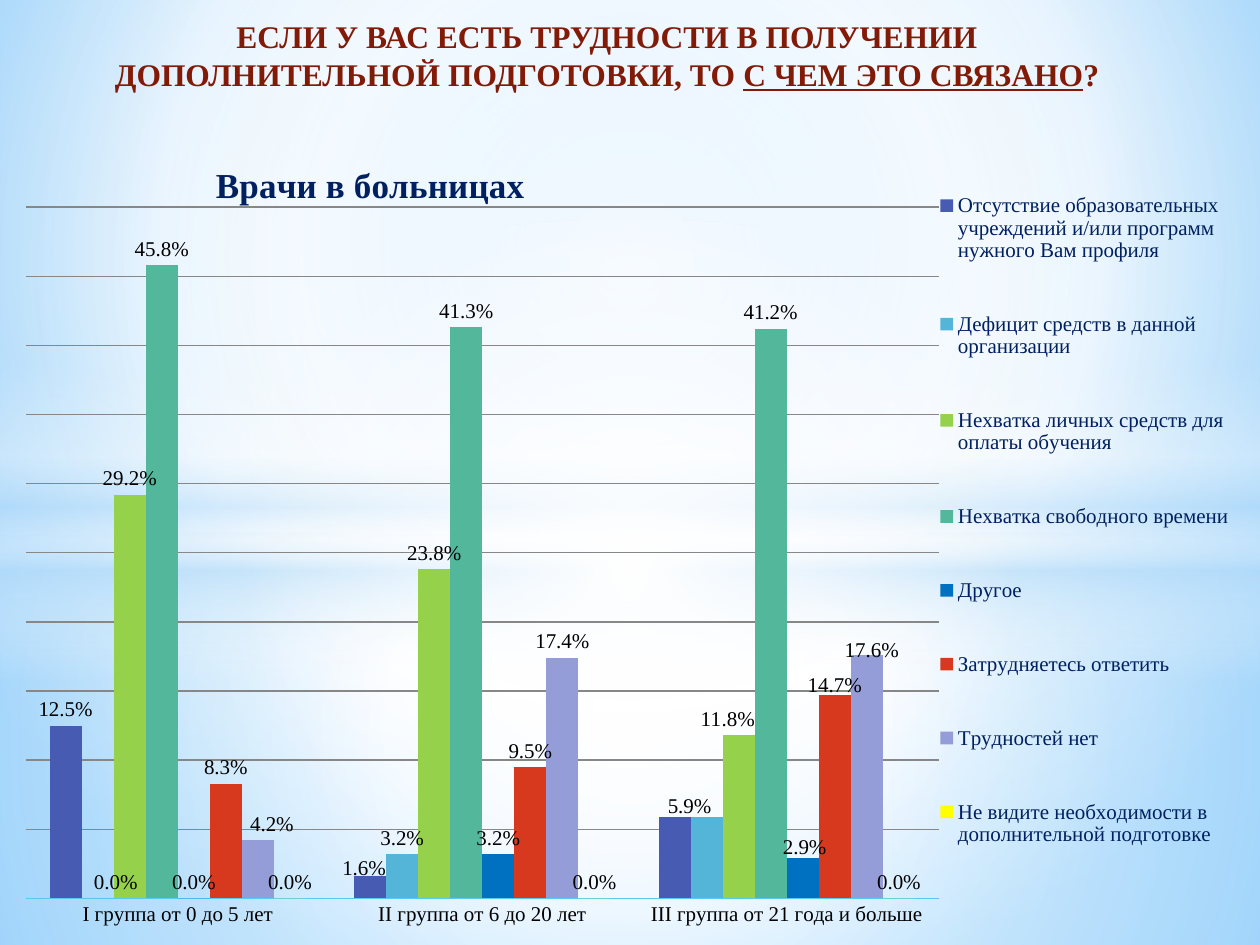
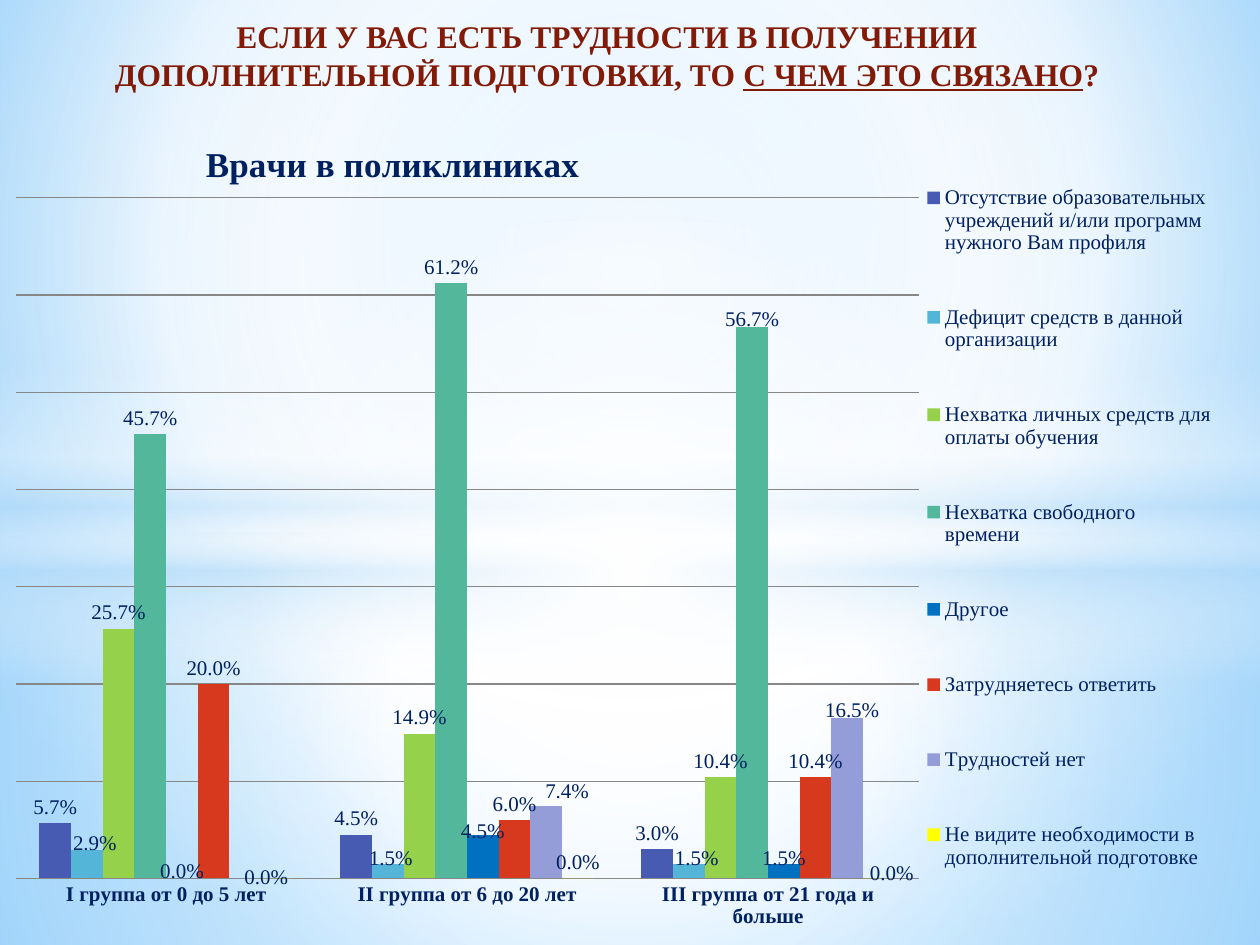
"""Build two survey slides with clustered column charts on a shared gradient background."""
from lxml import etree
from pptx import Presentation
from pptx import util as u
from pptx.chart.data import CategoryChartData
from pptx.dml.color import RGBColor
from pptx.enum import chart as c, shapes, text
from pptx.oxml import parse_xml
from pptx.oxml.ns import nsdecls, qn

PX = 914400 / 126
FONT = "Times New Roman"
MAROON = RGBColor(0x82, 0x1A, 0x08)
NAVY = RGBColor(0x00, 0x20, 0x60)
BLACK = RGBColor(0x00, 0x00, 0x00)
GRAY = RGBColor(0x87, 0x87, 0x87)
SKY = RGBColor(0x58, 0xC9, 0xF1)
INDIGO = RGBColor(0x46, 0x5B, 0xB1)
CYAN = RGBColor(0x54, 0xB5, 0xD9)
LIME = RGBColor(0x95, 0xD1, 0x4B)
TEAL = RGBColor(0x53, 0xB7, 0x9C)
BLUE = RGBColor(0x00, 0x70, 0xC0)
RED = RGBColor(0xD7, 0x39, 0x1F)
LAVENDER = RGBColor(0x94, 0x9D, 0xD7)
YELLOW = RGBColor(0xFF, 0xFF, 0x00)


def paint_gradient(fill, element, stops, focus=None):
    fill.gradient()
    stop_xml = "".join(
        f'<a:gs pos="{position * 1000}"><a:srgbClr val="{color}">'
        f'<a:alpha val="{opacity * 1000}"/></a:srgbClr></a:gs>'
        for position, color, opacity in stops)
    if focus:
        edges = " ".join(f'{side}="{value * 1000}"' for side, value in zip("ltrb", focus))
        direction = f'<a:path path="circle"><a:fillToRect {edges}/></a:path>'
    else:
        direction = '<a:lin ang="5400000" scaled="0"/>'
    old = element.find(".//" + qn("a:gradFill"))
    old.getparent().replace(old, parse_xml(
        f'<a:gradFill {nsdecls("a")} rotWithShape="1"><a:gsLst>{stop_xml}</a:gsLst>{direction}</a:gradFill>'))


def set_layout(parent, index, mode="edge", target=None, **values):
    for old in parent.findall(qn("c:layout")):
        parent.remove(old)
    target_xml = f'<c:layoutTarget val="{target}"/>' if target else ""
    mode_xml = f'<c:xMode val="{mode}"/><c:yMode val="{mode}"/>'
    value_xml = "".join(f'<c:{key} val="{value:.4f}"/>' for key, value in values.items())
    parent.insert(index, parse_xml(
        f'<c:layout {nsdecls("c")}><c:manualLayout>{target_xml}{mode_xml}{value_xml}'
        '</c:manualLayout></c:layout>'))


CENTER = (50, 50, 50, 50)
RECTANGLE = shapes.MSO_SHAPE.RECTANGLE
BANDS = [
    (RECTANGLE, (0, 533, 1260, 412), CENTER,
     [(0, "FFFFFF", 91), (37, "FFFFFF", 76), (100, "B4DCFA", 79)]),
    (RECTANGLE, (0, 0, 1260, 533), CENTER,
     [(0, "FFFFFF", 89), (48, "FFFFFF", 62), (100, "B4DCFA", 79)]),
    (RECTANGLE, (0, 365, 1260, 315), None,
     [(0, "FFFFFF", 0), (29, "FFFFFF", 30), (45, "B4DCFA", 40),
      (55, "FFFFFF", 26), (65, "B4DCFA", 60), (100, "FFFFFF", 0)]),
    (shapes.MSO_SHAPE.OVAL, (0, 220, 1260, 703), CENTER,
     [(0, "FFFFFF", 100), (54, "FFFFFF", 0)]),
]
TITLE_RUNS = [
    ("ЕСЛИ У ВАС ЕСТЬ ТРУДНОСТИ В ПОЛУЧЕНИИ ДОПОЛНИТЕЛЬНОЙ ПОДГОТОВКИ, ТО ", False),
    ("С ЧЕМ ЭТО СВЯЗАНО", True),
    ("?", False),
]
GROUPS = ["I группа от 0 до 5 лет", "II группа от 6 до 20 лет", "III группа от 21 года и больше"]
REASONS = [
    ("Отсутствие образовательных учреждений и/или программ нужного Вам профиля", INDIGO),
    ("Дефицит средств в данной организации", CYAN),
    ("Нехватка личных средств для оплаты обучения", LIME),
    ("Нехватка свободного времени", TEAL),
    ("Другое", BLUE),
    ("Затрудняетесь ответить", RED),
    ("Трудностей нет", LAVENDER),
    ("Не видите необходимости в дополнительной подготовке", YELLOW),
]
SURVEYS = [
    dict(
        name="Врачи в больницах", frame=(25, 116, 1235, 829), title_at=(209, 156),
        legend=(936, 143, 297, 754), plot_width=0.74, maximum=0.5, step=0.05,
        color=BLACK, axis_color=SKY, bold=False,
        values=[(0.125, 0.016, 0.059), (0, 0.032, 0.059), (0.292, 0.238, 0.118),
                (0.458, 0.413, 0.412), (0, 0.032, 0.029), (0.083, 0.095, 0.147),
                (0.042, 0.174, 0.176), (0, 0, 0)],
        label_shifts={(0, 1): (-6, 8), (0, 2): None, (1, 0): (18, 0), (1, 2): (-17, 6),
                      (2, 2): (-11, 0), (4, 2): (2, 5), (5, 2): (0, 6),
                      (6, 0): (14, 0), (6, 2): (5, 11)}),
    dict(
        name="Врачи в поликлиниках", frame=(15, 108, 1211, 820), title_at=(199, 136),
        legend=(926, 134, 286, 791), plot_width=0.746, maximum=0.7, step=0.1,
        color=NAVY, axis_color=GRAY, bold=True,
        values=[(0.057, 0.045, 0.03), (0.029, 0.015, 0.015), (0.257, 0.149, 0.104),
                (0.457, 0.612, 0.567), (0, 0.045, 0.015), (0.2, 0.06, 0.104),
                (0, 0.074, 0.165), (0, 0, 0)],
        label_shifts={(1, 0): (8, 9), (1, 1): (3, 11), (1, 2): (8, 11), (3, 2): (0, 8),
                      (4, 0): (0, 9), (4, 1): (0, 13), (4, 2): (0, 11), (6, 0): (21, 15),
                      (6, 1): (21, 1), (6, 2): (5, 8), (7, 0): None, (7, 2): (13, 11)}),
]

presentation = Presentation()
presentation.slide_width, presentation.slide_height = round(1260 * PX), round(945 * PX)
title_only = presentation.slide_layouts[5]
master = presentation.slide_master
slides = [presentation.slides.add_slide(title_only) for survey in SURVEYS]

paint_gradient(master.background.fill, master.element,
               [(0, "9ED5FF", 100), (60, "FFFFFF", 100), (100, "5BB9FF", 100)], (20, 10, 20, 60))
for number, (kind, box, focus, stops) in enumerate(BANDS):
    band = slides[0].shapes.add_shape(kind, *[round(length * PX) for length in box])
    band.shadow.inherit = False
    band.line.fill.background()
    paint_gradient(band.fill, band.element, stops, focus)
    band.element.nvSpPr.cNvPr.set("id", str(20 + number))
    master.element.cSld.spTree.insert(2 + number, band.element)

for slide, survey in zip(slides, SURVEYS):
    title = slide.shapes.title
    title.left, title.top, title.width, title.height = [round(length * PX) for length in (74, 11, 1066, 90)]
    title.text_frame.word_wrap = True
    title.text_frame.auto_size = text.MSO_AUTO_SIZE.SHAPE_TO_FIT_TEXT
    title.text_frame.vertical_anchor = text.MSO_ANCHOR.TOP
    paragraph = title.text_frame.paragraphs[0]
    paragraph.alignment = text.PP_ALIGN.CENTER
    for wording, underlined in TITLE_RUNS:
        run = paragraph.add_run()
        run.text = wording
        run.font.name, run.font.size, run.font.bold = FONT, u.Pt(18), True
        run.font.underline = underlined
        run.font.color.rgb = MAROON

    data = CategoryChartData(number_format="0.0%")
    data.categories = GROUPS
    for (reason, color), values in zip(REASONS, survey["values"]):
        data.add_series(reason, values)
    left, top, width, height = survey["frame"]
    chart = slide.shapes.add_chart(
        c.XL_CHART_TYPE.COLUMN_CLUSTERED, *[round(length * PX) for length in survey["frame"]], data).chart
    chart.font.name, chart.font.size = FONT, u.Pt(12)
    chart.font.color.rgb = survey["color"]

    chart.has_title = True
    chart.chart_title.text_frame.text = survey["name"]
    heading = chart.chart_title.text_frame.paragraphs[0].runs[0].font
    heading.name, heading.size, heading.bold = FONT, u.Pt(20), True
    heading.color.rgb = NAVY
    title_x, title_y = survey["title_at"]
    set_layout(chart.chart_title._element, 1, x=(title_x - left) / width, y=(title_y - top) / height)

    chart.has_legend = True
    legend = chart.legend
    legend.position = c.XL_LEGEND_POSITION.RIGHT
    legend.include_in_layout = False
    legend.font.name, legend.font.size = FONT, u.Pt(12)
    legend.font.color.rgb = NAVY
    legend_x, legend_y, legend_width, legend_height = survey["legend"]
    set_layout(legend._element, 1, x=(legend_x - left) / width, y=(legend_y - top) / height,
               w=legend_width / width, h=legend_height / height)

    category_axis, value_axis = chart.category_axis, chart.value_axis
    category_axis.major_tick_mark = c.XL_TICK_MARK.NONE
    category_axis.format.line.color.rgb = survey["axis_color"]
    category_axis.format.line.width = u.Pt(0.75)
    labels = category_axis.tick_labels.font
    labels.name, labels.size, labels.bold = FONT, u.Pt(12), survey["bold"]
    labels.color.rgb = survey["color"]
    value_axis.visible = False
    value_axis.minimum_scale, value_axis.maximum_scale = 0, survey["maximum"]
    value_axis.major_unit = survey["step"]
    value_axis.has_major_gridlines = True
    value_axis.major_gridlines.format.line.color.rgb = GRAY
    value_axis.major_gridlines.format.line.width = u.Pt(0.75)

    plot = chart.plots[0]
    plot.gap_width, plot.overlap = 150, 0
    plot.vary_by_categories = False
    set_layout(plot._element.getparent(), 0, target="inner", x=0, y=0.11, w=survey["plot_width"], h=0.834)
    for series, (reason, color) in zip(plot.series, REASONS):
        series.format.fill.solid()
        series.format.fill.fore_color.rgb = color
        series.invert_if_negative = False
        labels = series.data_labels
        labels.show_value = True
        labels.number_format, labels.number_format_is_linked = "0.0%", False
        labels.position = c.XL_LABEL_POSITION.OUTSIDE_END
        labels.font.name, labels.font.size = FONT, u.Pt(12)
        labels.font.color.rgb = survey["color"]
        for leader in series._element.xpath("c:dLbls/c:showLeaderLines"):
            leader.set("val", "0")

    for (row, column), shift in survey["label_shifts"].items():
        series = plot.series[row]
        series.points[column].data_label.position = c.XL_LABEL_POSITION.OUTSIDE_END
        label = series._element.xpath(f'c:dLbls/c:dLbl[c:idx/@val="{column}"]')[0]
        if shift:
            set_layout(label, 1, "factor", x=shift[0] / width, y=shift[1] / height)
        else:
            for child in label[1:]:
                label.remove(child)
            etree.SubElement(label, qn("c:delete")).set("val", "1")

presentation.save("out.pptx")
